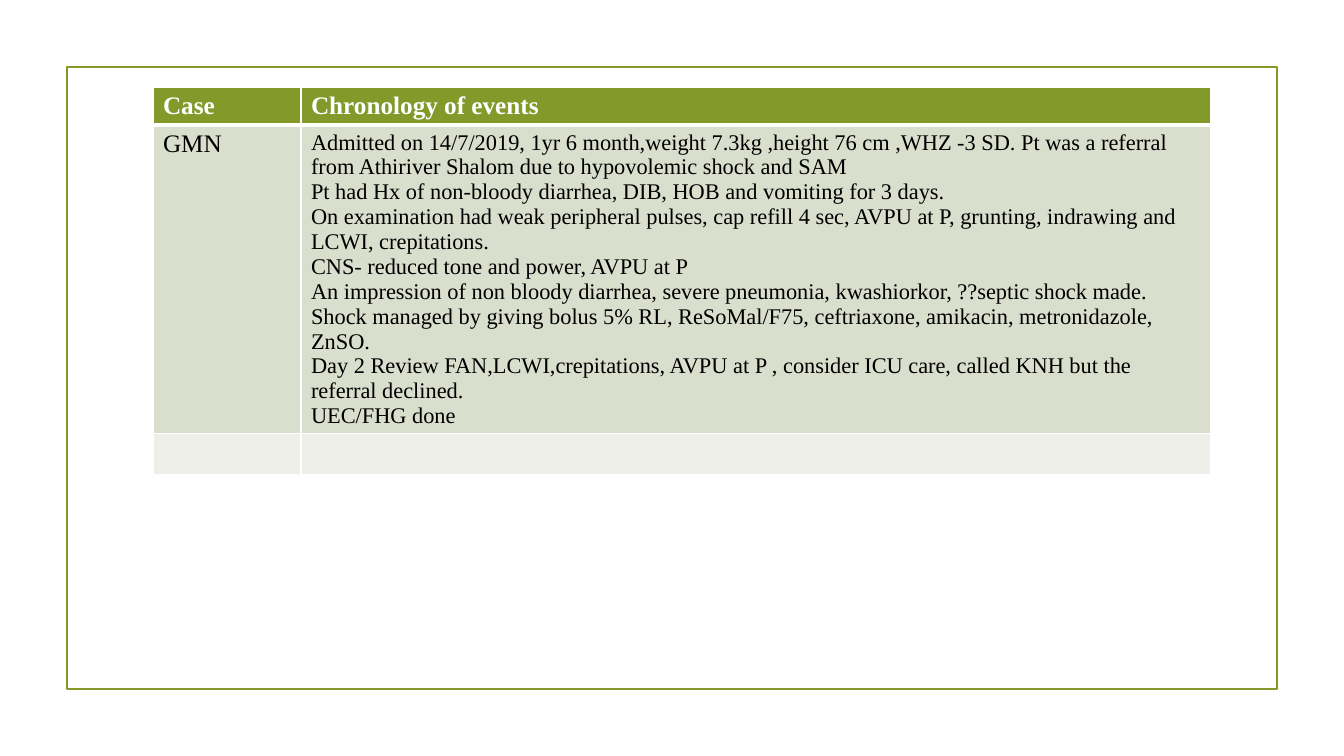
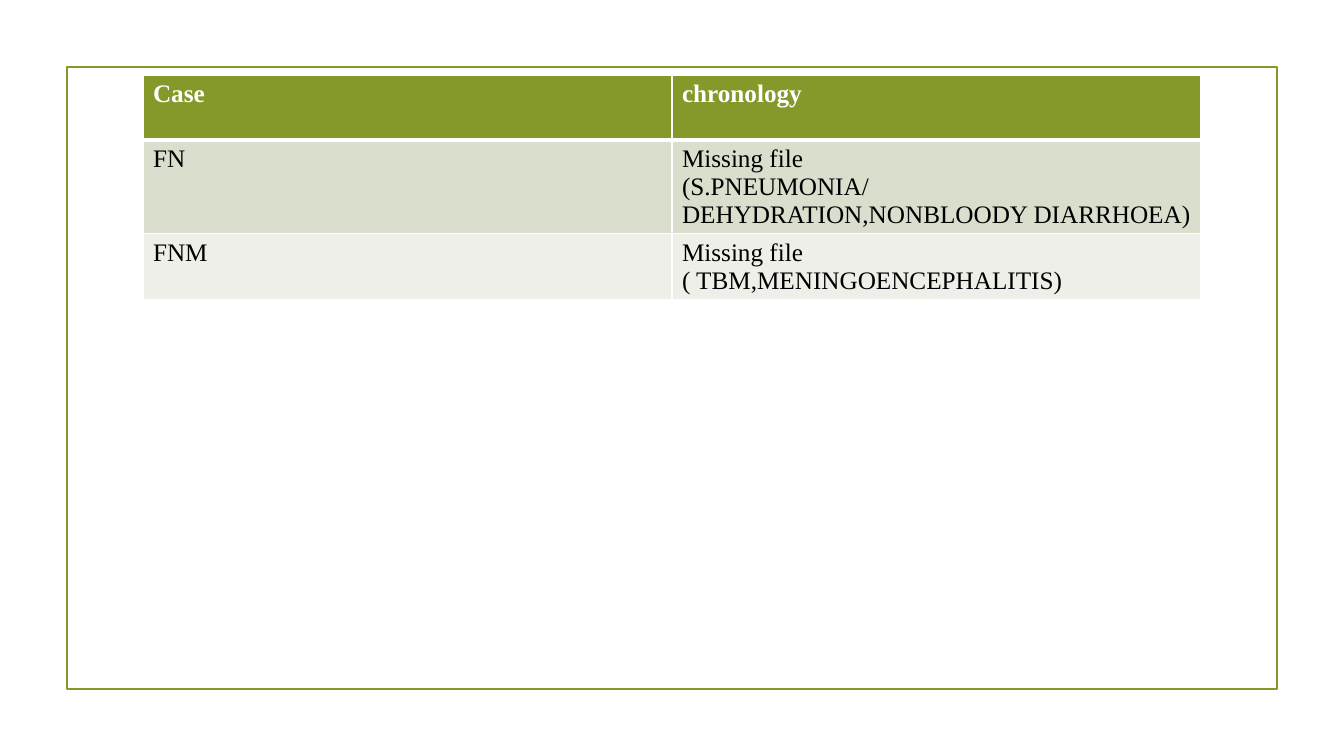
from lxml import etree
from pptx import Presentation
from pptx import util as u
from pptx.dml.color import RGBColor
from pptx.enum import shapes
from pptx.oxml import ns

OLIVE = RGBColor(0x83, 0x99, 0x2A)
SAGE = RGBColor(0xD9, 0xDE, 0xCD)
PALE = RGBColor(0xED, 0xEF, 0xE8)
WHITE = RGBColor(0xFF, 0xFF, 0xFF)
BLACK = RGBColor(0x00, 0x00, 0x00)
FONT = "Times New Roman"
ROW_FILLS = [OLIVE, SAGE, PALE]
SLIDE_SIZE = (1344, 756)
FRAME = (67, 67, 1210, 622)

EVENTS = [
    "Admitted on 14/7/2019, 1yr 6 month,weight 7.3kg ,height 76 cm ,WHZ -3 SD. "
    "Pt was a referral from Athiriver Shalom due to hypovolemic shock and SAM",
    "Pt had Hx of non-bloody diarrhea, DIB, HOB and vomiting for 3 days.",
    "On examination had weak peripheral pulses, cap refill 4 sec, AVPU at P, "
    "grunting, indrawing and LCWI, crepitations.",
    "CNS- reduced tone and power, AVPU at P",
    "An impression of non bloody diarrhea, severe pneumonia, kwashiorkor, "
    "??septic shock made.",
    "Shock managed by giving bolus 5% RL, ReSoMal/F75, ceftriaxone, amikacin, "
    "metronidazole, ZnSO.",
    "Day 2 Review FAN,LCWI,crepitations, AVPU at P , consider ICU care, "
    "called KNH but the referral declined.",
    "UEC/FHG done",
]

CASE_TABLES = [
    {
        "origin": (153, 87),
        "columns": [148, 910],
        "rows": [38, 308, 38],
        "event_size": 16,
        "cells": [
            [["Case"], ["Chronology of events"]],
            [["GMN"], EVENTS],
            [[], []],
        ],
    },
    {
        "origin": (143, 75),
        "columns": [529, 529],
        "rows": [65, 93, 66],
        "event_size": 18,
        "cells": [
            [["Case"], ["chronology"]],
            [["FN"], ["Missing file", "(S.PNEUMONIA/DEHYDRATION,NONBLOODY DIARRHOEA)"]],
            [["FNM"], ["Missing file", "( TBM,MENINGOENCEPHALITIS)"]],
        ],
    },
]


def px(length):
    return u.Emu(round(length * 914400 / 100.8))


def write(frame, lines, size=18, color=BLACK, bold=False):
    for index, line in enumerate(lines):
        para = frame.paragraphs[0] if index == 0 else frame.add_paragraph()
        span = para.add_run()
        span.text = line
        span.font.name = FONT
        span.font.size = u.Pt(size)
        span.font.bold = bold
        span.font.color.rgb = color


def set_borders(cell, top=1, bottom=1):
    properties = cell._tc.get_or_add_tcPr()
    widths = {"lnL": 1, "lnR": 1, "lnT": top, "lnB": bottom}
    for position, (side, width) in enumerate(widths.items()):
        border = etree.Element(ns.qn("a:" + side), w=str(u.Pt(width)))
        fill = etree.SubElement(border, ns.qn("a:solidFill"))
        etree.SubElement(fill, ns.qn("a:srgbClr"), val=str(WHITE))
        properties.insert(position, border)


def add_frame(page):
    box = page.shapes.add_shape(shapes.MSO_SHAPE.RECTANGLE, *map(px, FRAME))
    box.shadow.inherit = False
    box.fill.background()
    box.line.color.rgb = OLIVE
    box.line.width = u.Pt(1.25)


def add_case_table(page, case):
    columns, rows = case["columns"], case["rows"]
    extent = (*case["origin"], sum(columns), sum(rows))
    table = page.shapes.add_table(len(rows), len(columns), *map(px, extent)).table
    for column, width in zip(table.columns, columns):
        column.width = px(width)
    for r, height in enumerate(rows):
        table.rows[r].height = px(height)
        header = r == 0
        for c, lines in enumerate(case["cells"][r]):
            cell = table.cell(r, c)
            cell.fill.solid()
            cell.fill.fore_color.rgb = ROW_FILLS[r]
            set_borders(cell, top=3 if r == 1 else 1, bottom=3 if header else 1)
            write(
                cell.text_frame,
                lines,
                size=case["event_size"] if c and not header else 18,
                color=WHITE if header else BLACK,
                bold=header,
            )


def main():
    deck = Presentation()
    deck.slide_width, deck.slide_height = map(px, SLIDE_SIZE)
    for case in CASE_TABLES:
        page = deck.slides.add_slide(deck.slide_layouts[6])
        add_frame(page)
        add_case_table(page, case)
    deck.save("out.pptx")


if __name__ == "__main__":
    main()
